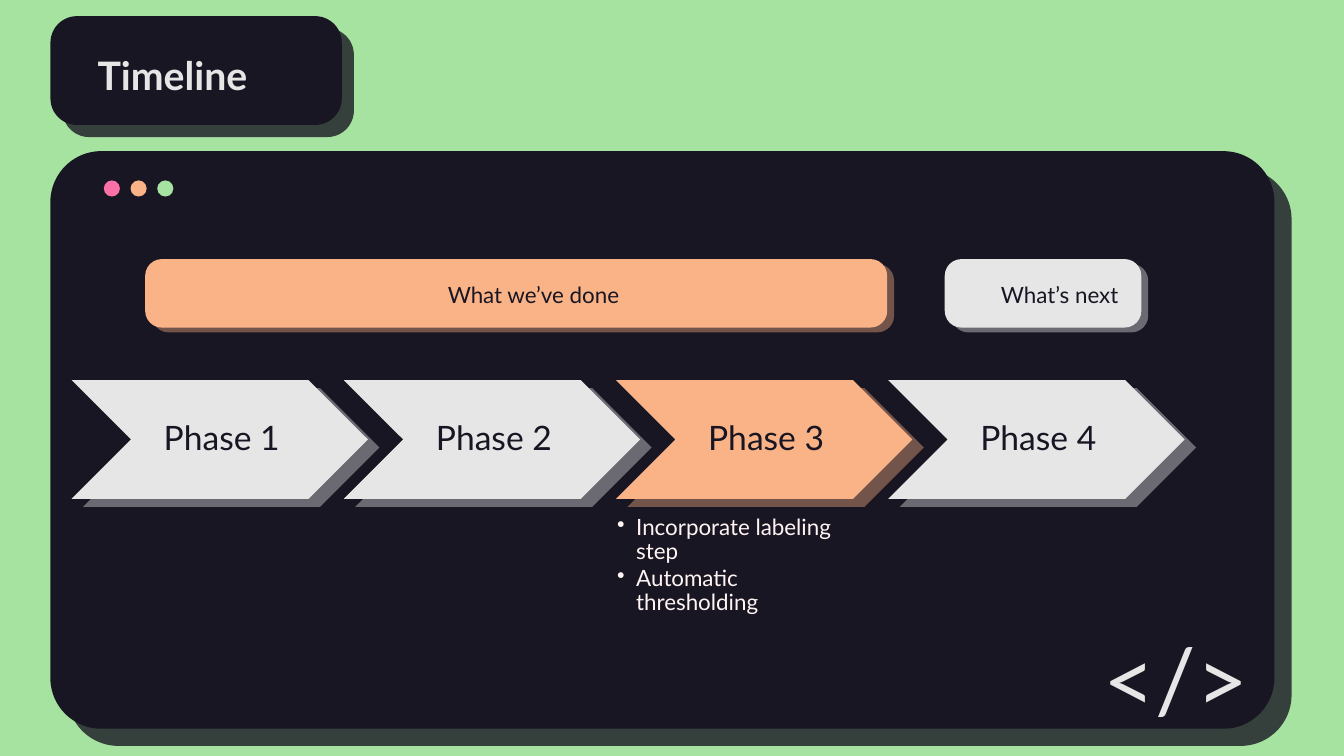
from lxml import etree
from pptx import Presentation, oxml
from pptx.dml.color import RGBColor
from pptx.enum import shapes, text
from pptx.oxml.ns import qn
from pptx.util import Inches, Pt

DARK, LIGHT, ORANGE, GREEN, PINK = "191623", "E7E6E6", "FAB387", "A6E3A1", "FB71A6"
ROUND = shapes.MSO_SHAPE.ROUNDED_RECTANGLE
LEFT, CENTER, RIGHT = text.PP_ALIGN.LEFT, text.PP_ALIGN.CENTER, text.PP_ALIGN.RIGHT


def set_fill(fill, color):
    """Fill with a solid hex colour."""
    fill.solid()
    fill.fore_color.rgb = RGBColor.from_string(color)


def add_alpha(clr, percent):
    """Give a colour element an opacity."""
    etree.SubElement(clr, qn("a:alpha"), val=str(percent * 1000))


def add_shape(slide, kind, box, color, adj=None, shadow=0):
    """Add a filled shape with an optional hard shadow, its distance in points."""
    sp = slide.shapes.add_shape(kind, *map(Inches, box))
    if adj is not None:
        sp.adjustments[0] = adj
    set_fill(sp.fill, color)
    sp.line.fill.background()
    sp.shadow.inherit = False
    if shadow:
        effects = sp._element.spPr.find(qn("a:effectLst"))
        outer = etree.SubElement(effects, qn("a:outerShdw"), blurRad="0", dist=str(Pt(shadow)),
                                 dir=str(35 * 60000), algn="tl", rotWithShape="0")
        add_alpha(etree.SubElement(outer, qn("a:srgbClr"), val=color), 40)
    return sp


def add_panel(slide, box, adj, offset):
    """Add a dark rounded panel above its translucent twin."""
    left, top, width, height = box
    back = add_shape(slide, ROUND, (left + offset, top + offset, width, height), DARK, adj)
    add_alpha(back._element.spPr.find(qn("a:solidFill"))[0], 80)
    add_shape(slide, ROUND, box, DARK, adj)


def add_text(slide, box, lines, size, color, align=LEFT, bold=False, insets=None, middle=False,
             spacing=None):
    """Add a text box with one paragraph per line."""
    tf = slide.shapes.add_textbox(*map(Inches, box)).text_frame
    tf.word_wrap = True
    if insets:
        tf.margin_left, tf.margin_top, tf.margin_right, tf.margin_bottom = map(Inches, insets)
    if middle:
        tf.vertical_anchor = text.MSO_ANCHOR.MIDDLE
    tf.text = "\n".join(lines)
    for p in tf.paragraphs:
        p.alignment = align
        p.line_spacing = spacing
        font = p.runs[0].font
        font.name, font.size, font.bold = "Lato", Pt(size), bold
        font.color.rgb = RGBColor.from_string(color)
    return tf


def add_bullets(slide, box, lines):
    """Add a bulleted list."""
    tf = add_text(slide, box, lines, 16, "FFF4F2", insets=(0, 0, 0, 0), spacing=0.9)
    for p in tf.paragraphs:
        p.space_after = Pt(2)
        pPr = p._p.get_or_add_pPr()
        pPr.set("marL", str(Inches(0.19)))
        pPr.set("indent", str(Inches(-0.19)))
        pPr.append(oxml.parse_xml(
            '<a:buChar xmlns:a="http://schemas.openxmlformats.org/drawingml/2006/main" char="•"/>'))


def add_phase(slide, left, label, color):
    """Add a chevron with its label."""
    add_shape(slide, shapes.MSO_SHAPE.CHEVRON, (left, 3.77, 2.94, 1.18), color, shadow=10)
    add_text(slide, (left + 0.58, 3.77, 1.76, 1.18), [label], 24, DARK, CENTER,
             insets=(0.1, 0.04, 0.04, 0.04), middle=True, spacing=0.9)


def add_banner(slide, left, width, color, label, label_left, label_width):
    """Add a rounded banner with its label."""
    add_shape(slide, ROUND, (left, 2.57, width, 0.68), color, 0.244, shadow=6)
    add_text(slide, (label_left, 2.74, label_width, 0.37), [label], 16, DARK, RIGHT)


def main():
    """Build the timeline slide."""
    prs = Presentation()
    prs.slide_width, prs.slide_height = Inches(13.33), Inches(7.5)
    slide = prs.slides.add_slide(prs.slide_layouts[6])
    set_fill(slide.background.fill, GREEN)

    add_panel(slide, (0.5, 1.5, 12.14, 5.73), 0.088, 0.17)
    add_panel(slide, (0.5, 0.16, 2.89, 1.08), 0.244, 0.12)
    add_text(slide, (0.87, 0.46, 2.15, 0.57), ["Timeline"], 28, LIGHT, bold=True)
    for i, color in enumerate((PINK, ORANGE, GREEN)):
        add_shape(slide, shapes.MSO_SHAPE.OVAL, (1.03 + 0.265 * i, 1.79, 0.16, 0.16), color)
    add_text(slide, (10.48, 6.14, 2.37, 1.18), ["</>"], 64, LIGHT, CENTER)

    for i, color in enumerate((LIGHT, LIGHT, ORANGE, LIGHT)):
        add_phase(slide, 0.71 + 2.7 * i, f"Phase {i + 1}", color)
    add_bullets(slide, (6.12, 5.12, 2.35, 1.28),
                ["Incorporate labeling step", "Automatic thresholding"])

    add_banner(slide, 1.44, 7.36, ORANGE, "What we’ve done", 3.99, 2.25)
    add_banner(slide, 9.37, 1.95, LIGHT, "What’s next", 9.44, 1.75)
    prs.save("out.pptx")


if __name__ == "__main__":
    main()
